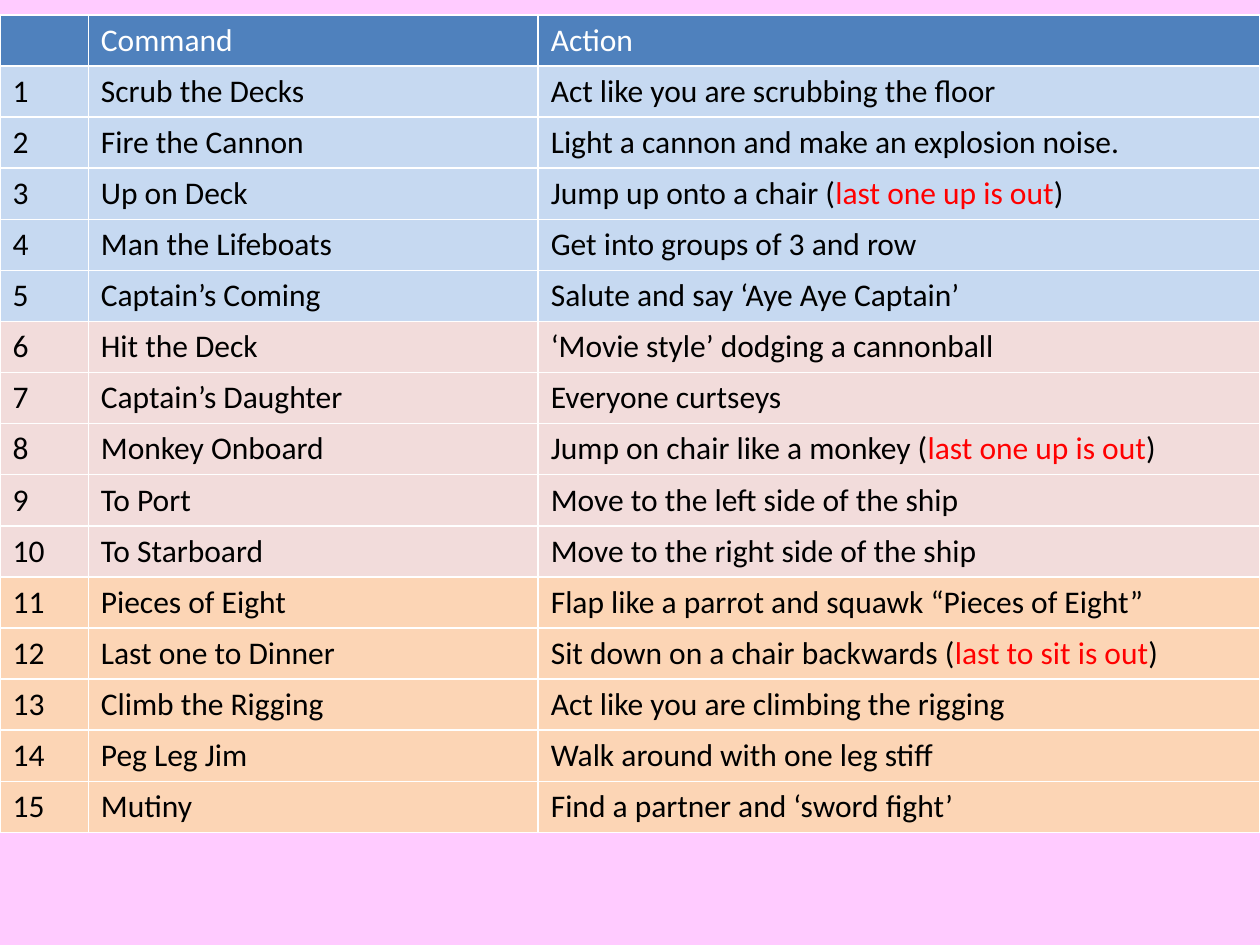
import dataclasses

import lxml.etree
import pptx
import pptx.dml.color
import pptx.oxml.ns
import pptx.util

Cm = pptx.util.Cm
qn = pptx.oxml.ns.qn


@dataclasses.dataclass(frozen=True)
class Theme:
    """Colours and type sizes of the slide."""
    backdrop: str = "FF99FF"
    backdrop_alpha: int = 51
    header: str = "4F81BD"
    bands: tuple = ("C6D9F1", "F2DCDB", "FCD5B5")
    border: str = "FFFFFF"
    border_width: int = 1
    light: str = "FFFFFF"
    dark: str = "000000"
    alert: str = "FF0000"
    font: str = "Calibri"
    size: int = 18


THEME = Theme()
BAND_ROWS = 5
COLUMNS = (1.78, 9.07, 14.55)
ROW_HEIGHT = 1.03
HEADER = ("", "Command", "Action")
COMMANDS = (
    ("Scrub the Decks", "Act like you are scrubbing the floor"),
    ("Fire the Cannon", "Light a cannon and make an explosion noise."),
    ("Up on Deck", "Jump up onto a chair (|last one up is out|)"),
    ("Man the Lifeboats", "Get into groups of 3 and row"),
    ("Captain’s Coming", "Salute and say ‘Aye Aye Captain’"),
    ("Hit the Deck", "‘Movie style’ dodging a cannonball"),
    ("Captain’s Daughter", "Everyone curtseys"),
    ("Monkey Onboard", "Jump on chair like a monkey (|last one up is out|)"),
    ("To Port", "Move to the left side of the ship"),
    ("To Starboard", "Move to the right side of the ship"),
    ("Pieces of Eight", "Flap like a parrot and squawk “Pieces of Eight”"),
    ("Last one to Dinner", "Sit down on a chair backwards (|last to sit is out|)"),
    ("Climb the Rigging", "Act like you are climbing the rigging"),
    ("Peg Leg Jim", "Walk around with one leg stiff"),
    ("Mutiny", "Find a partner and ‘sword fight’"),
)


def rgb(value):
    """Return the colour object for a hex string."""
    return pptx.dml.color.RGBColor.from_string(value)


def paint_background(s):
    """Fill the slide with the translucent backdrop colour."""
    fill = s.background.fill
    fill.solid()
    fill.fore_color.rgb = rgb(THEME.backdrop)
    color = next(s.background._cSld.iter(qn("a:srgbClr")))
    alpha = lxml.etree.SubElement(color, qn("a:alpha"))
    alpha.set("val", str(THEME.backdrop_alpha * 1000))


def set_borders(cell):
    """Draw the four cell borders."""
    tcPr = cell._tc.get_or_add_tcPr()
    width = str(pptx.util.Pt(THEME.border_width))
    for side in "LRTB":
        line = lxml.etree.SubElement(tcPr, qn(f"a:ln{side}"), w=width)
        fill = lxml.etree.SubElement(line, qn("a:solidFill"))
        lxml.etree.SubElement(fill, qn("a:srgbClr"), val=THEME.border)


def write_cell(cell, text, fill, color):
    """Format one cell and write its text, with alerts between bars."""
    set_borders(cell)
    cell.fill.solid()
    cell.fill.fore_color.rgb = rgb(fill)
    p = cell.text_frame.paragraphs[0]
    style = {"name": THEME.font, "size": pptx.util.Pt(THEME.size), "bold": False}
    for i, part in enumerate(text.split("|") if text else ()):
        r = p.add_run()
        r.text = part
        for name, value in style.items():
            setattr(r.font, name, value)
        r.font.color.rgb = rgb(THEME.alert if i % 2 else color)


def add_command_table(s, left, top, width):
    """Place the table of commands, its columns shared out over the width."""
    rows = len(COMMANDS) + 1
    table = s.shapes.add_table(rows, len(COLUMNS), Cm(left), Cm(top),
                               Cm(width), Cm(ROW_HEIGHT * rows)).table
    for column, share in zip(table.columns, COLUMNS):
        column.width = Cm(width * share / sum(COLUMNS))
    for row in table.rows:
        row.height = Cm(ROW_HEIGHT)
    for c, text in enumerate(HEADER):
        write_cell(table.cell(0, c), text, THEME.header, THEME.light)
    for n, command in enumerate(COMMANDS, 1):
        band = THEME.bands[(n - 1) // BAND_ROWS]
        for c, text in enumerate((str(n), *command)):
            write_cell(table.cell(n, c), text, band, THEME.dark)


def main():
    """Build the slide and save it."""
    prs = pptx.Presentation()
    prs.slide_width, prs.slide_height = Cm(25.4), Cm(19.05)
    s = prs.slides.add_slide(prs.slide_layouts[6])
    paint_background(s)
    add_command_table(s, 0, 0.3, 25.4)
    prs.save("out.pptx")


if __name__ == "__main__":
    main()
